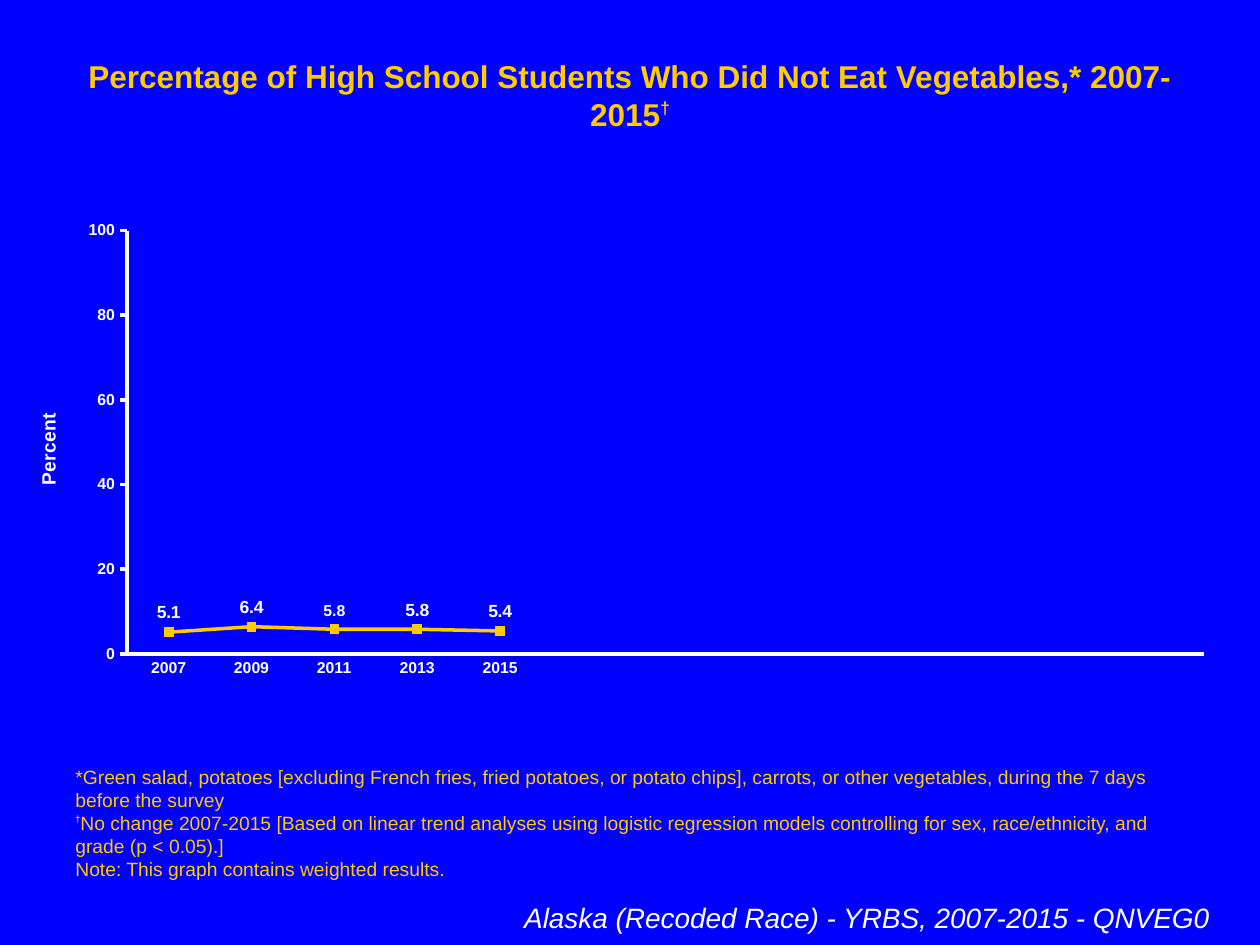
from lxml import etree
from pptx import Presentation
from pptx.chart.data import CategoryChartData
from pptx.dml.color import RGBColor
from pptx.enum import chart as kinds, text
from pptx.oxml import ns
from pptx.util import Inches, Pt

BLUE, GOLD, WHITE = "0000FF", "FFCC00", "FFFFFF"
YEARS = ["2007", "2009", "2011", "2013", "2015"]
PERCENTS = [5.1, 6.4, 5.8, 5.8, 5.4]
SLOTS = 13  # categories on the axis, the later ones left blank


def rgb(value):
    return RGBColor.from_string(value)


def style(font, size, color=WHITE, bold=False, italic=False):
    font.name, font.size = "Arial", Pt(size)
    font.bold, font.italic = bold, italic
    font.color.rgb = rgb(color)


def write(para, words, raised=0, **look):
    """Add one run; raised is the superscript offset in percent."""
    span = para.add_run()
    span.text = words
    style(span.font, **look)
    if raised:
        span._r.get_or_add_rPr().set("baseline", str(raised * 1000))


def place(shape, box):
    shape.left, shape.top, shape.width, shape.height = map(Inches, box)


def prepare(shape, anchor=text.MSO_ANCHOR.TOP):
    frame = shape.text_frame
    frame.word_wrap = True
    frame.auto_size = text.MSO_AUTO_SIZE.SHAPE_TO_FIT_TEXT
    frame.vertical_anchor = anchor
    return frame


def add_title(page, box):
    title = page.shapes.title
    place(title, box)
    para = prepare(title).paragraphs[0]
    para.alignment = text.PP_ALIGN.CENTER
    write(para, "Percentage of High School Students Who Did Not Eat Vegetables,* 2007-2015",
          size=18, color=GOLD, bold=True)
    write(para, "†", raised=40, size=17, color=GOLD, bold=True)


def add_footnotes(page, box):
    frame = prepare(page.shapes.add_textbox(*map(Inches, box)), text.MSO_ANCHOR.BOTTOM)
    notes = [
        ("", "*Green salad, potatoes [excluding French fries, fried potatoes, or potato chips], "
             "carrots, or other vegetables, during the 7 days before the survey"),
        ("†", "No change 2007-2015 [Based on linear trend analyses using logistic regression "
              "models controlling for sex, race/ethnicity, and grade (p < 0.05).]"),
        ("", "Note: This graph contains weighted results."),
    ]
    for index, (mark, words) in enumerate(notes):
        para = frame.add_paragraph() if index else frame.paragraphs[0]
        if mark:
            write(para, mark, raised=50, size=9, color=GOLD, bold=True)
        write(para, words, size=11, color=GOLD)


def add_survey_name(page, box):
    para = prepare(page.shapes.add_textbox(*map(Inches, box))).paragraphs[0]
    para.alignment = text.PP_ALIGN.RIGHT
    write(para, "Alaska (Recoded Race) - YRBS, 2007-2015 - QNVEG0", size=16, italic=True)


def fix_plot_area(chart, x, y, w, h):
    """Pin the inner plot area, in fractions of the chart."""
    plot_area = chart._chartSpace.chart.plotArea
    for old in plot_area.findall(ns.qn("c:layout")):
        plot_area.remove(old)
    layout = etree.Element(ns.qn("c:layout"))
    manual = etree.SubElement(layout, ns.qn("c:manualLayout"))
    settings = [("layoutTarget", "inner"), ("xMode", "edge"), ("yMode", "edge"),
                ("x", x), ("y", y), ("w", w), ("h", h)]
    for tag, value in settings:
        etree.SubElement(manual, ns.qn(f"c:{tag}")).set("val", str(value))
    plot_area.insert(0, layout)


def format_axis(axis, tick):
    axis.has_major_gridlines = False
    axis.major_tick_mark = tick
    axis.minor_tick_mark = kinds.XL_TICK_MARK.NONE
    axis.format.line.color.rgb = rgb(WHITE)
    axis.format.line.width = Pt(2)
    style(axis.tick_labels.font, 9, bold=True)


def format_series(series):
    series.smooth = False
    series.format.line.color.rgb = rgb(GOLD)
    series.format.line.width = Pt(2)
    marker = series.marker
    marker.style, marker.size = kinds.XL_MARKER_STYLE.SQUARE, 5
    marker.format.fill.solid()
    marker.format.fill.fore_color.rgb = rgb(GOLD)
    marker.format.line.color.rgb = rgb(GOLD)
    labels = series.data_labels
    labels.show_value = True
    labels.number_format, labels.number_format_is_linked = "#,##0.0", False
    labels.position = kinds.XL_LABEL_POSITION.ABOVE
    style(labels.font, 10, bold=True)
    small = series.points[YEARS.index("2011")].data_label
    style(small.font, 9, bold=True)
    small.position = kinds.XL_LABEL_POSITION.ABOVE


def add_trend_chart(page, box):
    blanks = SLOTS - len(YEARS)
    data = CategoryChartData(number_format="0.0")
    data.categories = YEARS + [""] * blanks
    data.add_series("Series 1", PERCENTS + [None] * blanks)
    chart = page.shapes.add_chart(
        kinds.XL_CHART_TYPE.LINE_MARKERS, *map(Inches, box), data).chart
    chart.has_legend = chart.has_title = False
    style(chart.font, 18)
    chart.plots[0].vary_by_categories = False
    fix_plot_area(chart, 0.08, 0.04, 0.9, 0.84)

    format_axis(chart.category_axis, kinds.XL_TICK_MARK.NONE)
    percent = chart.value_axis
    format_axis(percent, kinds.XL_TICK_MARK.OUTSIDE)
    percent.minimum_scale, percent.maximum_scale, percent.major_unit = 0, 100, 20
    percent.tick_labels.number_format = "#,##0"
    percent.tick_labels.number_format_is_linked = False
    write(percent.axis_title.text_frame.paragraphs[0], "Percent", size=11, bold=True)
    format_series(chart.plots[0].series[0])


def main():
    deck = Presentation()
    deck.slide_width, deck.slide_height = Inches(10), Inches(7.5)
    page = deck.slides.add_slide(deck.slide_layouts.get_by_name("Title Only"))
    page.background.fill.solid()
    page.background.fill.fore_color.rgb = rgb(BLUE)
    add_title(page, (0.5, 0.4, 9, 0.4))
    add_footnotes(page, (0.5, 6.75, 9, 0.29))
    add_survey_name(page, (1.92, 7.1, 7.78, 0.37))
    add_trend_chart(page, (0.25, 1.67, 9.5, 4))
    deck.save("out.pptx")


if __name__ == "__main__":
    main()
